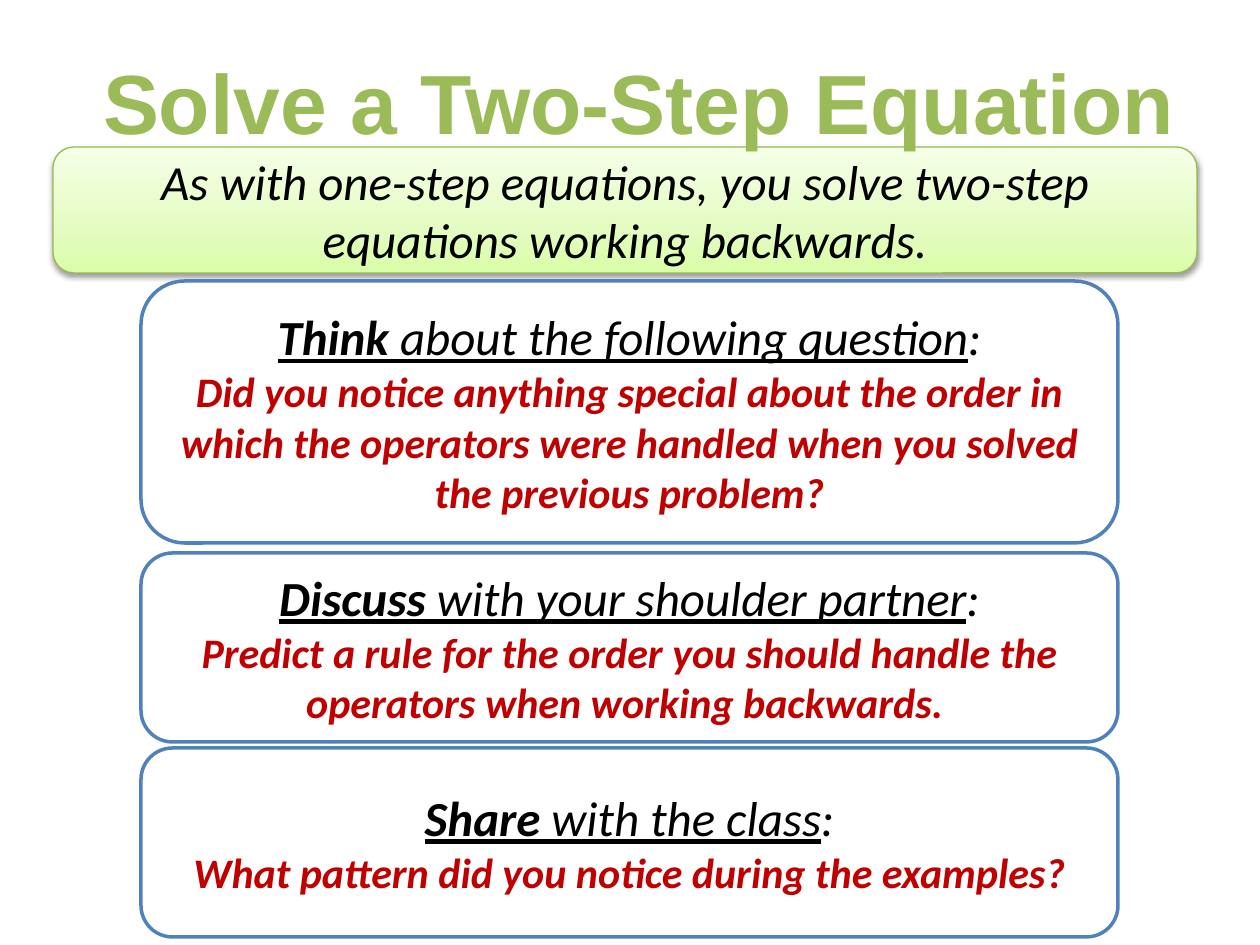
from lxml import etree
from pptx import Presentation
from pptx.dml.color import RGBColor
from pptx.enum.shapes import MSO_SHAPE
from pptx.enum.text import MSO_ANCHOR, PP_ALIGN
from pptx.oxml.ns import qn
from pptx.util import Emu, Pt

ROUNDED = MSO_SHAPE.ROUNDED_RECTANGLE
CENTER = PP_ALIGN.CENTER
MIDDLE, TOP = MSO_ANCHOR.MIDDLE, MSO_ANCHOR.TOP

COLORS = {"title": "9BBB59", "text": "000000", "prompt": "C00000", "card": "FFFFFF",
          "card_line": "4F81BD", "banner_line": "98B955", "shadow": "000000"}
BANNER_STOPS = [(0, "DAFDA7"), (35, "E4FCC2"), (100, "F5FFE7")]

TITLE = "Solve a Two-Step Equation"
TITLE_AREA = (84, 44, 1110, 115)
BANNER = "As with one-step equations, you solve two-step equations working backwards."
BANNER_AREA = (53, 147, 1144, 126)
CARD_LEFT, CARD_WIDTH = 141, 977
CARDS = [  # top, height, verb, rest of heading, prompt
    (281, 262, "Think", " about the following question",
     "Did you notice anything special about the order in which the operators "
     "were handled when you solved the previous problem?"),
    (553, 189, "Discuss ", "with your shoulder partner",
     "Predict a rule for the order you should handle the operators when working backwards. "),
    (748, 189, "Share ", "with the class",
     "What pattern did you notice during the examples?"),
]


def px(value):
    return Emu(round(value * 914400 / 126))


def rgb(name):
    return RGBColor.from_string(COLORS[name])


def add_span(paragraph, text, size, color="text", font="Calibri",
             bold=False, italic=True, underline=False):
    paragraph.alignment = CENTER
    span = paragraph.add_run()
    span.text = text
    span.font.name, span.font.size = font, Pt(size)
    span.font.bold, span.font.italic, span.font.underline = bold, italic, underline
    span.font.color.rgb = rgb(color)


def add_box(page, area, line_color, line_width):
    box = page.shapes.add_shape(ROUNDED, *map(px, area))
    box.shadow.inherit = False
    box.line.color.rgb = rgb(line_color)
    box.line.width = Pt(line_width)
    box.text_frame.word_wrap = True
    box.text_frame.vertical_anchor = MIDDLE
    return box


def add_color(parent, color):
    return etree.SubElement(parent, qn("a:srgbClr"), val=color)


def add_banner(page):
    box = add_box(page, BANNER_AREA, "banner_line", 0.75)
    box.fill.gradient()
    box.fill.gradient_angle = 90
    stops = box.element.spPr.find(".//" + qn("a:gsLst"))
    for stop in list(stops):
        stops.remove(stop)
    for position, color in BANNER_STOPS:
        add_color(etree.SubElement(stops, qn("a:gs"), pos=str(position * 1000)), color)

    effects = box.element.spPr.find(qn("a:effectLst"))
    shadow = etree.SubElement(effects, qn("a:outerShdw"), blurRad=str(Pt(3.1)),
                              dist=str(Pt(1.6)), dir="5400000", rotWithShape="0")
    etree.SubElement(add_color(shadow, COLORS["shadow"]), qn("a:alpha"), val="38000")
    add_span(box.text_frame.paragraphs[0], BANNER, 28)


def add_card(page, top, height, verb, rest, prompt):
    box = add_box(page, (CARD_LEFT, top, CARD_WIDTH, height), "card_line", 2)
    box.fill.solid()
    box.fill.fore_color.rgb = rgb("card")
    heading = box.text_frame.paragraphs[0]
    add_span(heading, verb, 28, bold=True, underline=True)
    add_span(heading, rest, 28, underline=True)
    add_span(heading, ":", 28)
    add_span(box.text_frame.add_paragraph(), prompt, 24, "prompt", bold=True)


def set_title(page):
    """Fill the title and bring it in front of the banner."""
    title = page.shapes.title
    title.left, title.top, title.width, title.height = map(px, TITLE_AREA)
    title.text_frame.word_wrap = False
    title.text_frame.vertical_anchor = TOP
    add_span(title.text_frame.paragraphs[0], TITLE, 48, "title", "Arial",
             bold=True, italic=False)
    title.element.getparent().append(title.element)


def main():
    deck = Presentation()
    deck.slide_width, deck.slide_height = px(1260), px(945)
    page = deck.slides.add_slide(deck.slide_layouts[5])
    add_banner(page)
    for card in CARDS:
        add_card(page, *card)
    set_title(page)
    deck.save("out.pptx")


if __name__ == "__main__":
    main()
